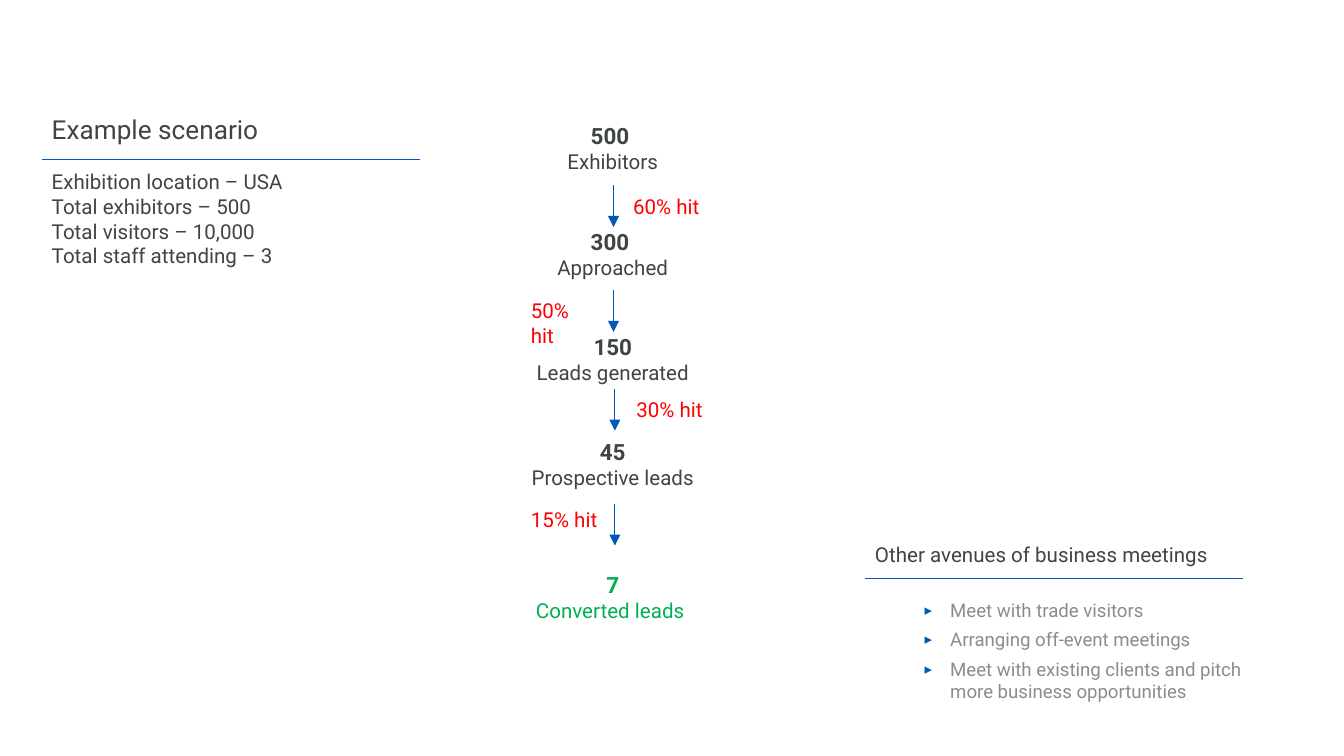
from lxml.etree import SubElement
from pptx import Presentation
from pptx.dml.color import RGBColor
from pptx.enum.shapes import MSO_CONNECTOR
from pptx.enum.text import MSO_ANCHOR, MSO_AUTO_SIZE, PP_ALIGN
from pptx.oxml.ns import qn
from pptx.util import Pt

PX = 4572  # 200 px to the inch
DARK, GRAY, BLUE, RED, GREEN = "3F4444", "8C8C8C", "0059B9", "FF0000", "00B050"


def write(shape, box, text, size, color, align=PP_ALIGN.LEFT):
    """Place a text shape and fill it with evenly formatted paragraphs."""
    shape.left, shape.top, shape.width, shape.height = [n * PX for n in box]
    frame = shape.text_frame
    frame.text = text
    frame.word_wrap = True
    frame.auto_size = MSO_AUTO_SIZE.NONE
    frame.vertical_anchor = MSO_ANCHOR.TOP
    frame.margin_left = frame.margin_right = 15 * PX
    frame.margin_top = frame.margin_bottom = 7 * PX
    for paragraph in frame.paragraphs:
        paragraph.alignment = align
        paragraph.space_before = Pt(0)
        for run in paragraph.runs:
            run.font.name = "Roboto"
            run.font.size = Pt(size)
            run.font.bold = False
            run.font.color.rgb = RGBColor.from_string(color)
    return frame.paragraphs


def add_line(x1, y1, x2, y2, arrow=False):
    line = slide.shapes.add_connector(
        MSO_CONNECTOR.STRAIGHT, x1 * PX, y1 * PX, x2 * PX, y2 * PX)
    line.line.color.rgb = RGBColor.from_string(BLUE)
    line.line.width = Pt(0.5)
    if arrow:
        SubElement(line.line._get_or_add_ln(), qn("a:tailEnd"), type="triangle")
    SubElement(line._element.spPr, qn("a:effectLst"))


presentation = Presentation()
presentation.slide_width = 2000 * PX
presentation.slide_height = 1125 * PX
slide = presentation.slides.add_slide(presentation.slide_layouts[3])
title, facts, avenues = slide.placeholders

# Example scenario
write(title, (62, 162, 612, 68), "Example scenario", 14, DARK)
add_line(62, 237, 625, 237)
scenario = [
    "Exhibition location – USA",
    "Total exhibitors – 500",
    "Total visitors – 10,000",
    "Total staff attending – 3",
]
for paragraph in write(facts, (62, 245, 612, 165), "\n".join(scenario), 11, DARK):
    properties = paragraph._p.get_or_add_pPr()
    properties.set("marL", "0")
    properties.set("indent", "0")
    SubElement(properties, qn("a:buNone"))

# Other avenues
heading = slide.shapes.add_textbox(0, 0, 0, 0)
write(heading, (1287, 799, 638, 54), "Other avenues of business meetings", 11, DARK)
add_line(1287, 861, 1850, 861)
meetings = [
    "Meet with trade visitors",
    "Arranging off-event meetings",
    "Meet with existing clients and pitch more business opportunities",
]
bullets = write(avenues, (1287, 884, 638, 174), "\n".join(meetings), 10, GRAY)
for index, paragraph in enumerate(bullets):
    paragraph.level = 1
    paragraph.space_before = Pt(3.8 if index else 0)
    properties = paragraph._p.get_or_add_pPr()
    properties.set("marL", str(112 * PX))
    properties.set("indent", str(-38 * PX))
    SubElement(SubElement(properties, qn("a:buClr")), qn("a:srgbClr"), val=BLUE)
    SubElement(properties, qn("a:buSzPct"), val="80000")
    SubElement(properties, qn("a:buChar"), char="▸")

# Lead funnel
stages = [
    (175, "500 ", "Exhibitors", DARK),
    (332, "300 ", "Approached", DARK),
    (489, "150", "Leads generated", DARK),
    (645, "45", "Prospective leads", DARK),
    (843, "7", "Converted leads ", GREEN),
]
for top, count, label, color in stages:
    stage = slide.shapes.add_textbox(0, 0, 0, 0)
    number, caption = write(stage, (462, top, 900, 92), f"{count}\n{label}", 11,
                            color, PP_ALIGN.CENTER)
    number.runs[0].font.size = Pt(12)
    number.runs[0].font.bold = True

for x, top in [(913, 276), (913, 432), (915, 579), (915, 750)]:
    add_line(x, top, x, top + 62, arrow=True)

hit_rates = [
    ("60% hit", (927, 281, 150, 52)),
    ("50% hit", (775, 437, 125, 90)),
    ("30% hit", (932, 584, 174, 52)),
    ("15% hit", (775, 748, 138, 52)),
]
for text, box in hit_rates:
    write(slide.shapes.add_textbox(0, 0, 0, 0), box, text, 11, RED)

presentation.save("out.pptx")
